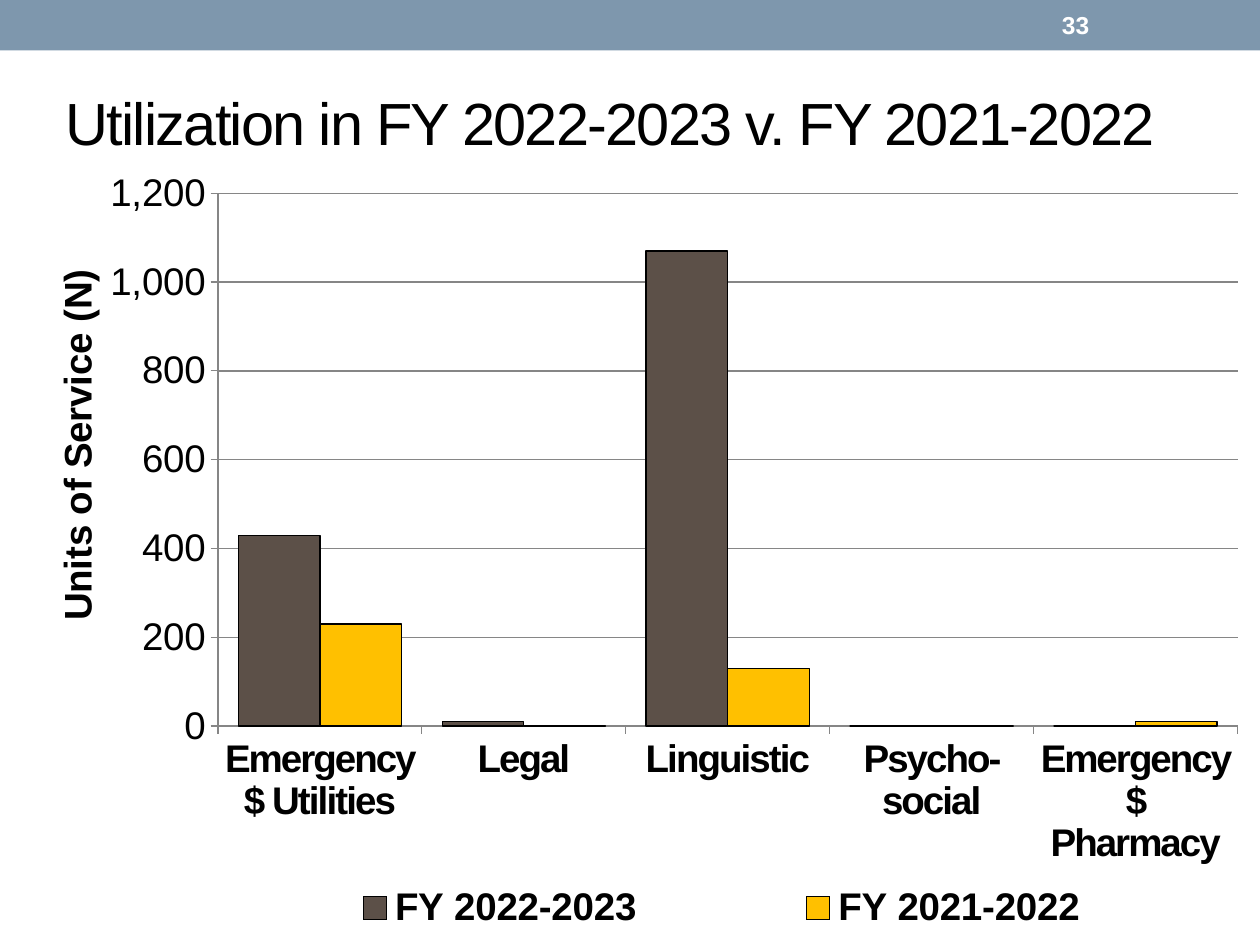
"""Build the service utilization slide comparing two fiscal years."""
from lxml import etree
from pptx import Presentation
from pptx.chart.data import CategoryChartData
from pptx.dml.color import RGBColor
from pptx.enum.chart import XL_CHART_TYPE as ChartType
from pptx.enum.chart import XL_LEGEND_POSITION as LegendPosition
from pptx.enum.chart import XL_TICK_MARK as TickMark
from pptx.enum.shapes import MSO_SHAPE as Shape
from pptx.enum.text import MSO_ANCHOR as Anchor
from pptx.enum.text import PP_ALIGN as Align
from pptx.oxml import parse_xml
from pptx.oxml.ns import nsdecls, qn
from pptx.util import Inches, Pt

BLACK = RGBColor(0x00, 0x00, 0x00)
WHITE = RGBColor(0xFF, 0xFF, 0xFF)
BAND_BLUE = RGBColor(0x7E, 0x97, 0xAD)
AXIS_GRAY = RGBColor(0x86, 0x86, 0x86)
BROWN = RGBColor(0x5C, 0x50, 0x48)
GOLD = RGBColor(0xFF, 0xC0, 0x00)


def style(font, size, color, bold=False):
    font.name = "Arial"
    font.size = Pt(size)
    font.color.rgb = color
    font.bold = bold


def place(part, successors, inner=False, **fractions):
    for old in part.findall(qn("c:layout")):
        part.remove(old)
    layout = parse_xml(f"<c:layout {nsdecls('c')}><c:manualLayout/></c:layout>")
    settings = {"layoutTarget": "inner"} if inner else {}
    settings |= {"xMode": "edge", "yMode": "edge"} | fractions
    for tag, value in settings.items():
        etree.SubElement(layout[0], qn(f"c:{tag}")).set("val", str(value))
    part.insert_element_before(layout, *successors)


prs = Presentation()
prs.slide_width, prs.slide_height = Inches(10), Inches(7.5)
slide = prs.slides.add_slide(prs.slide_layouts[5])

band = slide.shapes.add_shape(Shape.RECTANGLE, 0, 0, Inches(10), Inches(0.4))
band.shadow.inherit = False
band.fill.solid()
band.fill.fore_color.rgb = BAND_BLUE
band.line.fill.background()

title = slide.shapes.title
title.left, title.top = Inches(0.42), Inches(0.43)
title.width, title.height = Inches(9), Inches(1.08)
title.text_frame.text = "Utilization in FY 2022-2023 v. FY 2021-2022"
title.text_frame.vertical_anchor = Anchor.MIDDLE
heading = title.text_frame.paragraphs[0]
heading.alignment = Align.LEFT
style(heading.font, 34, BLACK)
heading.runs[0].font._element.set("spc", "-100")

page_number = slide.shapes.add_textbox(
    Inches(8.33), Inches(0.02), Inches(1.17), Inches(0.36)
).text_frame
page_number.word_wrap = True
page_number.vertical_anchor = Anchor.MIDDLE
page_number.text = "33"
style(page_number.paragraphs[0].font, 14, WHITE, bold=True)

utilization = CategoryChartData(number_format="General")
utilization.categories = [
    "Emergency $ Utilities", "Legal", "Linguistic", "Psycho- social", "Emergency $ Pharmacy",
]
utilization.add_series("FY 2022-2023", [430, 10, 1070, 0, 0])
utilization.add_series("FY 2021-2022", [230, 0, 130, 0, 10])
chart = slide.shapes.add_chart(
    ChartType.COLUMN_CLUSTERED,
    Inches(0.17), Inches(1.35), Inches(9.75), Inches(6.13), utilization,
).chart
style(chart.font, 22, BLACK)
chart.has_title = False

columns = chart.plots[0]
columns.gap_width = 50
columns.overlap = 0
columns.vary_by_categories = False
for year, color in zip(columns.series, (BROWN, GOLD)):
    year.format.fill.solid()
    year.format.fill.fore_color.rgb = color
    year.format.line.color.rgb = BLACK
    year.format.line.width = Pt(0.75)

services, units = chart.category_axis, chart.value_axis
for axis in (services, units):
    axis.major_tick_mark = TickMark.OUTSIDE
    axis.minor_tick_mark = TickMark.NONE
    axis.format.line.color.rgb = AXIS_GRAY
    axis.format.line.width = Pt(0.75)
    style(axis.tick_labels.font, 22, BLACK, bold=axis is services)
services.tick_labels.font._element.set("spc", "-100")

units.minimum_scale, units.maximum_scale, units.major_unit = 0, 1200, 200
units.tick_labels.number_format = "#,##0"
units.tick_labels.number_format_is_linked = False
units.has_major_gridlines = True
units.major_gridlines.format.line.color.rgb = AXIS_GRAY
units.major_gridlines.format.line.width = Pt(0.75)
units.axis_title.text_frame.text = "Units of Service (N)"
style(units.axis_title.text_frame.paragraphs[0].font, 22, BLACK, bold=True)

chart.has_legend = True
chart.legend.position = LegendPosition.BOTTOM
chart.legend.include_in_layout = False
style(chart.legend.font, 22, BLACK, bold=True)

place(chart._chartSpace.chart.plotArea, ("c:barChart",), inner=True, x=0.16, y=0.03, w=0.83, h=0.69)
place(units.axis_title._element, ("c:overlay", "c:spPr", "c:txPr"), x=0.02, y=0.12)
place(chart.legend._element, ("c:overlay", "c:spPr", "c:txPr"), x=0.15, y=0.92, w=0.84, h=0.07)

prs.save("out.pptx")
